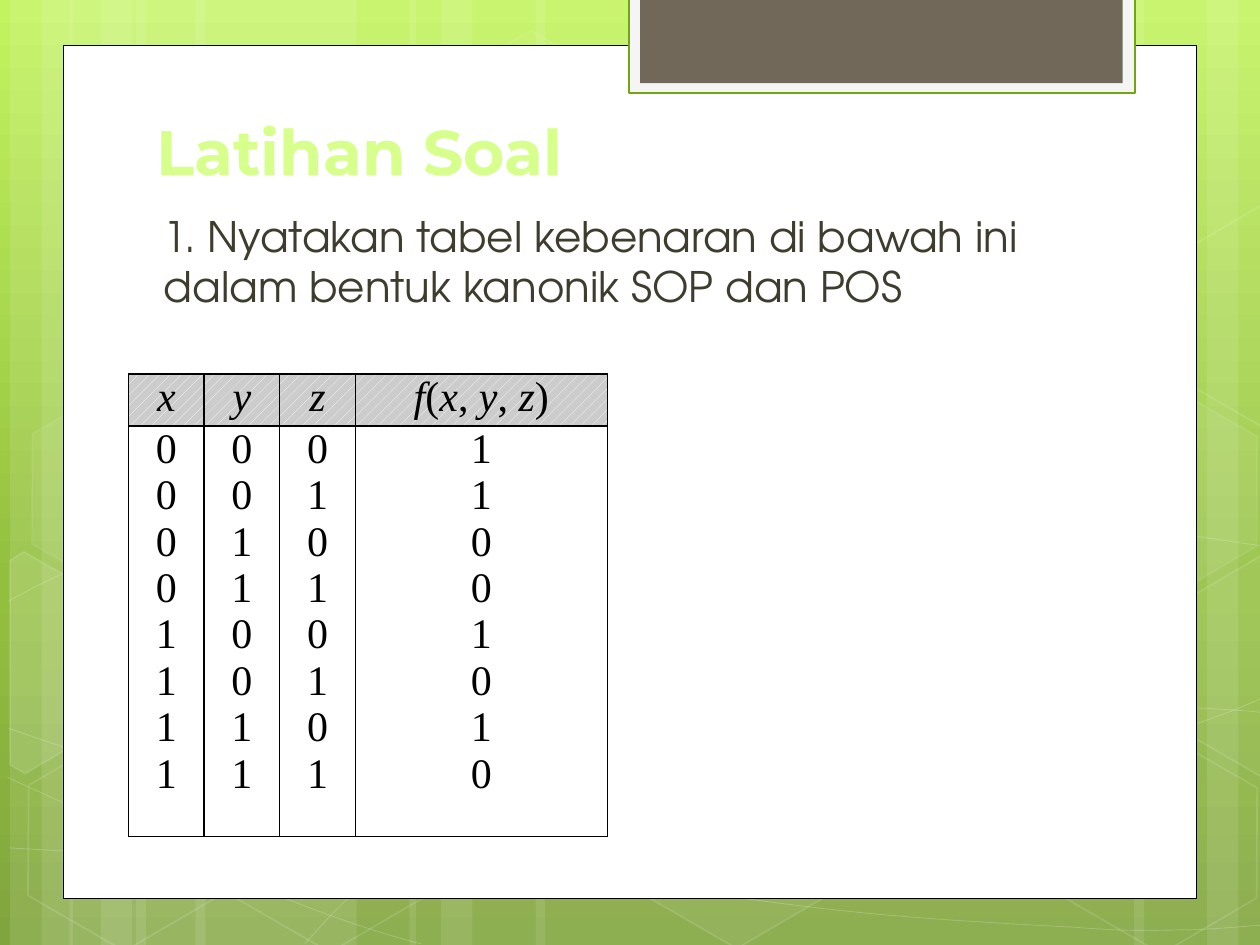
from copy import deepcopy
from itertools import product

from pptx import Presentation
from pptx.dml.color import RGBColor
from pptx.enum.dml import MSO_PATTERN
from pptx.enum.shapes import MSO_SHAPE as SHAPE
from pptx.enum.text import MSO_ANCHOR as ANCHOR, MSO_AUTO_SIZE as AUTO, PP_ALIGN as ALIGN
from pptx.oxml.ns import qn
from pptx.oxml.xmlchemy import OxmlElement
from pptx.util import Inches, Pt

BANDS = [(1.08, 1.75), (0.08, 0.5), (0.33, 0.83), (1.55, 1.75), (0.55, 0.5), (0.8, 0.83),
         (7.33, 1.75), (9.58, 0.5), (9, 0.83), (4.25, 3.08), (3.25, 0.5), (3.5, 0.83)]

CURVES = [
    [(0.07, 6.73), (0.61, 6.76, 1.15, 6.79, 1.9, 6.78), (2.65, 6.77, 3.58, 6.75, 4.58, 6.65),
     (5.58, 6.55, 7, 6.36, 7.92, 6.17), (8.83, 5.98, 9.77, 5.68, 10.07, 5.51)],
    [(0.07, 4.77), (0.36, 4.61, 0.65, 4.46, 1.21, 4.31), (1.78, 4.16, 2.59, 3.94, 3.47, 3.87),
     (4.36, 3.8, 5.44, 3.79, 6.54, 3.87), (7.64, 3.95, 9.47, 4.26, 10.07, 4.34)],
    [(0.06, 6.17), (1.27, 6.72, 2.47, 7.27, 3.34, 7.49)],
    [(0.07, 5.78), (0.38, 5.89, 0.7, 6, 1.28, 6.16), (1.86, 6.31, 2.73, 6.56, 3.57, 6.73),
     (4.4, 6.9, 5.45, 7.08, 6.28, 7.18), (7.11, 7.29, 8, 7.33, 8.53, 7.36),
     (9.05, 7.4, 9.19, 7.38, 9.45, 7.38), (9.71, 7.37, 9.89, 7.35, 10.07, 7.34)],
    [(2.42, 7.49), (2.6, 7.29, 2.78, 7.09, 3.02, 6.91), (3.26, 6.73, 3.6, 6.53, 3.88, 6.39),
     (4.16, 6.25, 4.33, 6.19, 4.7, 6.09), (5.06, 5.99, 5.73, 5.85, 6.08, 5.78),
     (6.44, 5.71, 6.49, 5.71, 6.8, 5.69), (7.11, 5.66, 7.6, 5.63, 7.94, 5.62),
     (8.29, 5.61, 8.86, 5.62, 8.86, 5.62), (9.53, 5.62),
     (9.71, 5.63, 9.88, 5.64, 9.97, 5.65), (10.06, 5.66, 10.03, 5.65, 10.06, 5.66)],
]

HEXAGONS = [(3.34, 0.36, 4, 8), (4.97, 5.89, 6, 12), (0.11, 5.91, None, 12),
            (0.14, 3.12, 7, 8), (1.74, 5.92, None, 12), (7.53, 4.53, 10, 12),
            (8.34, 5.93, None, 12), (8.34, 3.14, 7, 8)]

CUT_HEXAGONS = [
    ([(0.08, 4.45), (0.19, 4.38), (0.96, 4.82), (0.95, 5.7), (0.2, 6.14), (0.08, 6.07)], 10),
    ([(9.26, 4.85), (10.01, 4.41), (10.09, 4.46), (10.09, 6.13), (10.02, 6.17), (9.26, 5.73)], 4),
    ([(9.26, 2.07), (10.01, 1.63), (10.1, 1.68), (10.09, 3.35), (10.02, 3.39), (9.26, 2.95)], None),
]

OUTPUTS = "11001010"
VARIABLES = list(zip(*product("01", repeat=3)))


def rgb(value):
    return RGBColor.from_string(value)


class Deck:
    heading = {"name": "Montserrat", "size": Pt(36), "bold": True, "color": "D6FF8C"}
    prose = {"name": "TeX Gyre Adventor", "size": Pt(24), "color": "3E3D2D"}
    digits = {"name": "Times New Roman", "size": Pt(24), "color": "000000"}

    def __init__(self):
        self.prs = Presentation()
        self.prs.slide_width, self.prs.slide_height = Inches(10), Inches(7.5)
        self.s = self.prs.slides.add_slide(self.prs.slide_layouts[5])

    def background(self, stops):
        fill = self.s.background.fill
        fill.gradient()
        fill.gradient_angle = 270
        gs_list = self.s.element.find(".//" + qn("a:gsLst"))
        gs_list.append(deepcopy(gs_list[0]))
        for stop, (position, color) in zip(fill.gradient_stops, stops):
            stop.position, stop.color.rgb = position, rgb(color)

    def paint(self, fill, color, alpha=None):
        fill.solid()
        fill.fore_color.rgb = rgb(color)
        if alpha is not None:
            node = OxmlElement("a:alpha")
            node.set("val", str(alpha * 1000))
            fill._xPr.find(".//" + qn("a:srgbClr")).append(node)

    def finish(self, sp, fill=None, alpha=None, line=None, width=1, line_alpha=None):
        sp.shadow.inherit = False
        if fill:
            self.paint(sp.fill, fill, alpha)
        else:
            sp.fill.background()
        if line:
            self.paint(sp.line.fill, line, line_alpha)
            sp.line.width = Pt(width)
        else:
            sp.line.fill.background()
        return sp

    def shape(self, kind, box, **style):
        return self.finish(self.s.shapes.add_shape(kind, *map(Inches, box)), **style)

    def outline(self, segments, close, **style):
        ends = [tuple(map(Inches, seg[-2:])) for seg in segments]
        builder = self.s.shapes.build_freeform(*ends[0])
        builder.add_line_segments(ends[1:], close=close)
        sp = builder.convert_to_shape()
        for node, seg in zip(sp.element.findall(".//" + qn("a:lnTo")), segments[1:]):
            if len(seg) == 6:
                self.bend(node, seg, sp.left, sp.top)
        return self.finish(sp, **style)

    def bend(self, node, seg, left, top):
        bezier = OxmlElement("a:cubicBezTo")
        for x, y in zip(seg[::2], seg[1::2]):
            pt = OxmlElement("a:pt")
            pt.set("x", str(Inches(x) - left))
            pt.set("y", str(Inches(y) - top))
            bezier.append(pt)
        node.getparent().replace(node, bezier)

    def run(self, p, text, style, **extra):
        r = p.add_run()
        r.text = text
        for key, value in {**style, **extra}.items():
            if key == "color":
                r.font.color.rgb = rgb(value)
            else:
                setattr(r.font, key, value)

    def title(self, text, box):
        sp = self.s.shapes.title
        sp.element.getparent().append(sp.element)
        sp.left, sp.top, sp.width, sp.height = map(Inches, box)
        tf = sp.text_frame
        for key, value in {"auto_size": AUTO.NONE, "vertical_anchor": ANCHOR.BOTTOM,
                           "word_wrap": True, "margin_bottom": Inches(0.05)}.items():
            setattr(tf, key, value)
        p = tf.paragraphs[0]
        p.alignment = ALIGN.LEFT
        self.run(p, text, self.heading)

    def text(self, text, box, indent):
        tf = self.s.shapes.add_textbox(*map(Inches, box)).text_frame
        tf.word_wrap = True
        p = tf.paragraphs[0]
        p.space_before = Pt(4.8)
        p._p.get_or_add_pPr().set("marL", str(Inches(indent)))
        self.run(p, text, self.prose)

    def border(self, cell):
        props = cell._tc.get_or_add_tcPr()
        for i, side in enumerate(("a:lnL", "a:lnR", "a:lnT", "a:lnB")):
            ln = OxmlElement(side)
            ln.set("w", str(Pt(1)))
            solid, color = OxmlElement("a:solidFill"), OxmlElement("a:srgbClr")
            color.set("val", "000000")
            solid.append(color)
            ln.append(solid)
            props.insert(i, ln)

    def table(self, box, widths, heights, headers, columns):
        frame = self.s.shapes.add_table(2, len(widths), *map(Inches, box))
        table = frame.table
        table.first_row = table.horz_banding = False
        for column, width in zip(table.columns, widths):
            column.width = Inches(width)
        for row, height in zip(table.rows, heights):
            row.height = Inches(height)
        for i, (header, values) in enumerate(zip(headers, columns)):
            head, body = table.cell(0, i), table.cell(1, i)
            head.fill.patterned()
            head.fill.pattern = MSO_PATTERN.PERCENT_20
            head.fill.fore_color.rgb, head.fill.back_color.rgb = rgb("FFFFFF"), rgb("CCCCCC")
            body.fill.background()
            for cell in (head, body):
                cell.margin_left = cell.margin_right = Inches(0.07)
                cell.margin_top = cell.margin_bottom = 0
                self.border(cell)
            p = head.text_frame.paragraphs[0]
            p.alignment = ALIGN.CENTER
            for part in header:
                self.run(p, part, self.digits, italic=part.isalpha())
            tf = body.text_frame
            for j, value in enumerate(values):
                p = tf.add_paragraph() if j else tf.paragraphs[0]
                p.alignment = ALIGN.CENTER
                self.run(p, value, self.digits)


def main():
    deck = Deck()
    deck.background([(0, "C3F35F"), (0.62, "93BF3F"), (1, "81A53E")])
    for left, width in BANDS:
        deck.shape(SHAPE.RECTANGLE, (left, 0, width, 7.5), fill="FFFFFF", alpha=10)
    for curve in CURVES:
        deck.outline(curve, False, line="FFFFFF", width=0.5, line_alpha=20)
    for left, top, alpha, line_alpha in HEXAGONS:
        sp = deck.shape(SHAPE.HEXAGON, (left, top, 1.75, 1.52), fill=alpha and "FFFFFF",
                        alpha=alpha, line="FFFFFF", line_alpha=line_alpha)
        sp.rotation, sp.adjustments[0] = 30, 0.285
    for points, alpha in CUT_HEXAGONS:
        deck.outline(points, True, fill=alpha and "FFFFFF", alpha=alpha,
                     line="FFFFFF", line_alpha=12)
    deck.shape(SHAPE.RECTANGLE, (0.5, 0.36, 9, 6.77), fill="FFFFFF", line="000000", width=0.5)
    deck.shape(SHAPE.RECTANGLE, (4.99, -0.02, 4.02, 0.76), fill="F5F5F5", line="74A510", width=1.25)
    deck.shape(SHAPE.RECTANGLE, (5.08, -0.02, 3.83, 0.68), fill="71685A")
    deck.title("Latihan Soal", (1.14, 1.12, 7.68, 0.42))
    deck.text("1. Nyatakan tabel kebenaran di bawah ini dalam bentuk kanonik SOP dan POS",
              (0.83, 1.62, 7.41, 3.84), 0.37)
    deck.table((1.02, 2.97, 3.8, 3.67), (0.6, 0.6, 0.6, 2), (0.41, 3.26),
               ["x", "y", "z", ("f", "(", "x", ", ", "y", ", ", "z", ")")],
               VARIABLES + [OUTPUTS])
    deck.prs.save("out.pptx")


if __name__ == "__main__":
    main()
